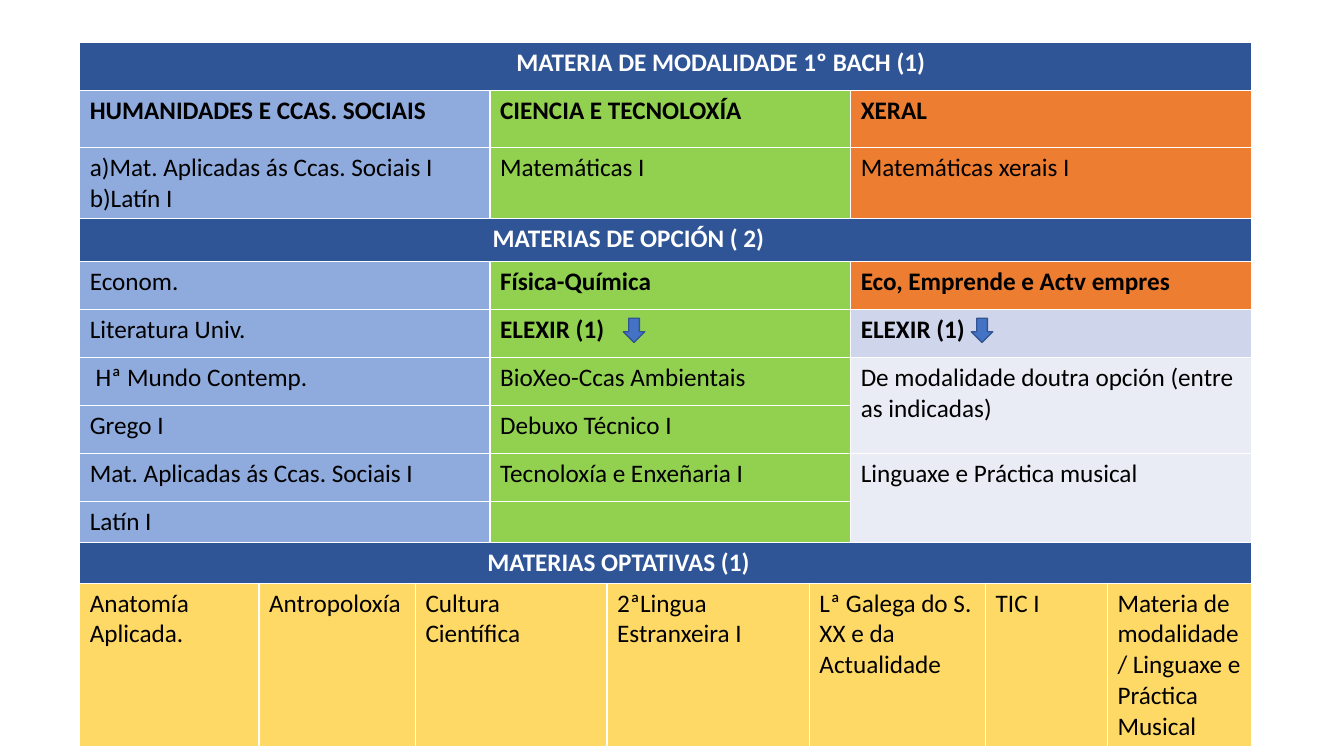
from pptx import Presentation
from pptx.dml.color import RGBColor
from pptx.enum.shapes import MSO_SHAPE
from pptx.util import Cm, Pt

DOWN_ARROW = MSO_SHAPE.DOWN_ARROW

WHITE = RGBColor(0xFF, 0xFF, 0xFF)
BLACK = RGBColor(0x00, 0x00, 0x00)
NAVY = RGBColor(0x2F, 0x55, 0x97)
BLUE = RGBColor(0x8F, 0xAA, 0xDC)
GREEN = RGBColor(0x92, 0xD0, 0x50)
ORANGE = RGBColor(0xED, 0x7D, 0x31)
LAVENDER = RGBColor(0xCF, 0xD5, 0xEA)
PALE = RGBColor(0xE9, 0xEB, 0xF5)
YELLOW = RGBColor(0xFF, 0xD9, 0x66)
ARROW_FILL = RGBColor(0x44, 0x72, 0xC4)
ARROW_LINE = RGBColor(0x32, 0x54, 0x91)

COLUMN_WIDTHS = [4.52, 3.94, 1.88, 2.95, 5.1, 1.04, 3.4, 3.07, 3.63]
ROW_HEIGHTS = [1.21, 1.43, 1.75, 1.07] + [1.21] * 5 + [1.02, 0.94, 4.01]
TRACK_SPAN = 3  # grid columns under each track
TRACK_COLORS = [BLUE, GREEN, ORANGE]

# row: (title, indent in cm)
BANDS = {
    0: ("MATERIA DE MODALIDADE 1º BACH (1)", 10.75),
    3: ("MATERIAS DE OPCIÓN ( 2)", 10.15),
    10: ("MATERIAS OPTATIVAS (1)", 10.02),
}
# row: subjects of the three tracks; None continues the cell above
TRACK_ROWS = {
    1: ("HUMANIDADES E CCAS. SOCIAIS", "CIENCIA E TECNOLOXÍA", "XERAL"),
    2: ("a)Mat. Aplicadas ás Ccas. Sociais I b)Latín I", "Matemáticas I",
        "Matemáticas xerais I"),
    4: ("Econom.", "Física-Química", "Eco, Emprende e Actv empres"),
    5: ("Literatura Univ.", "ELEXIR (1)", "ELEXIR (1)"),
    6: (" Hª Mundo Contemp.", "BioXeo-Ccas Ambientais",
        "De modalidade doutra opción (entre as indicadas)"),
    7: ("Grego I", "Debuxo Técnico I", None),
    8: ("Mat. Aplicadas ás Ccas. Sociais I", "Tecnoloxía e Enxeñaria I",
        "Linguaxe e Práctica musical"),
    9: ("Latín I", "", None),
}
BOLD_TRACKS = {1: (0, 1, 2), 4: (1, 2), 5: (1, 2)}
GENERAL_COLORS = {5: LAVENDER, 6: PALE, 8: PALE}
OPTIONAL_ROW = 11
# (subject, grid columns)
OPTIONAL_SUBJECTS = [
    ("Anatomía Aplicada.", 1),
    ("Antropoloxía", 1),
    ("Cultura Científica", 2),
    ("2ªLingua Estranxeira I", 1),
    ("Lª Galega do S. XX e da Actualidade", 2),
    ("TIC I", 1),
    ("Materia de modalidade / Linguaxe e Práctica Musical", 1),
]
CHOICE_ROW = 5
ARROW_OFFSETS = {1: 3.36, 2: 3.04}  # track: cm from the left of its cell


def write(cell, text, *, color=BLACK, bold=False, size=18, font="Calibri", indent=0):
    paragraph = cell.text_frame.paragraphs[0]
    paragraph.font.size = Pt(size)
    if indent:
        properties = paragraph._p.get_or_add_pPr()
        properties.set("marL", str(Cm(indent)))
        properties.set("indent", "0")
    if text:
        run = paragraph.add_run()
        run.text = text
        run.font.name = font
        run.font.size = Pt(size)
        run.font.bold = bold
        run.font.color.rgb = color


def fill_block(table, row, column, text, fill, columns=1, rows=1, **text_format):
    """Merge a block of grid cells, colour it and write its text."""
    cell = table.cell(row, column)
    if columns > 1 or rows > 1:
        cell.merge(table.cell(row + rows - 1, column + columns - 1))
    cell.fill.solid()
    cell.fill.fore_color.rgb = fill
    write(cell, text, **text_format)


def fill_bands(table):
    for row, (title, indent) in BANDS.items():
        fill_block(table, row, 0, title, NAVY, len(COLUMN_WIDTHS),
                   color=WHITE, bold=True, indent=indent)


def fill_tracks(table):
    for row, subjects in TRACK_ROWS.items():
        for track, subject in enumerate(subjects):
            if subject is None:
                continue
            fill = TRACK_COLORS[track]
            if track == 2:
                fill = GENERAL_COLORS.get(row, fill)
            continues = TRACK_ROWS.get(row + 1, subjects)[track] is None
            fill_block(table, row, track * TRACK_SPAN, subject, fill,
                       TRACK_SPAN, 2 if continues else 1,
                       bold=track in BOLD_TRACKS.get(row, ()))


def fill_optional_subjects(table):
    column = 0
    for subject, columns in OPTIONAL_SUBJECTS:
        fill_block(table, OPTIONAL_ROW, column, subject, YELLOW, columns)
        column += columns


def add_subject_table(slide, left, top):
    width, height = sum(COLUMN_WIDTHS), sum(ROW_HEIGHTS)
    table = slide.shapes.add_table(len(ROW_HEIGHTS), len(COLUMN_WIDTHS),
                                   Cm(left), Cm(top), Cm(width), Cm(height)).table
    for column, column_width in zip(table.columns, COLUMN_WIDTHS):
        column.width = Cm(column_width)
    for row, row_height in zip(table.rows, ROW_HEIGHTS):
        row.height = Cm(row_height)
    fill_bands(table)
    fill_tracks(table)
    fill_optional_subjects(table)


def add_choice_arrows(slide, left, top):
    """Point down from each ELEXIR cell of the table at left, top."""
    arrow_top = top + sum(ROW_HEIGHTS[:CHOICE_ROW]) + 0.28
    for track, offset in ARROW_OFFSETS.items():
        arrow_left = left + sum(COLUMN_WIDTHS[:track * TRACK_SPAN]) + offset
        arrow = slide.shapes.add_shape(DOWN_ARROW, Cm(arrow_left), Cm(arrow_top),
                                       Cm(0.54), Cm(0.61))
        arrow.shadow.inherit = False
        arrow.fill.solid()
        arrow.fill.fore_color.rgb = ARROW_FILL
        arrow.line.color.rgb = ARROW_LINE
        arrow.line.width = Pt(1)


def main():
    presentation = Presentation()
    presentation.slide_width = Cm(33.87)
    presentation.slide_height = Cm(19.05)
    slide = presentation.slides.add_slide(presentation.slide_layouts[6])
    left, top = 2.01, 1.07
    add_subject_table(slide, left, top)
    add_choice_arrows(slide, left, top)
    presentation.save("out.pptx")


if __name__ == "__main__":
    main()
